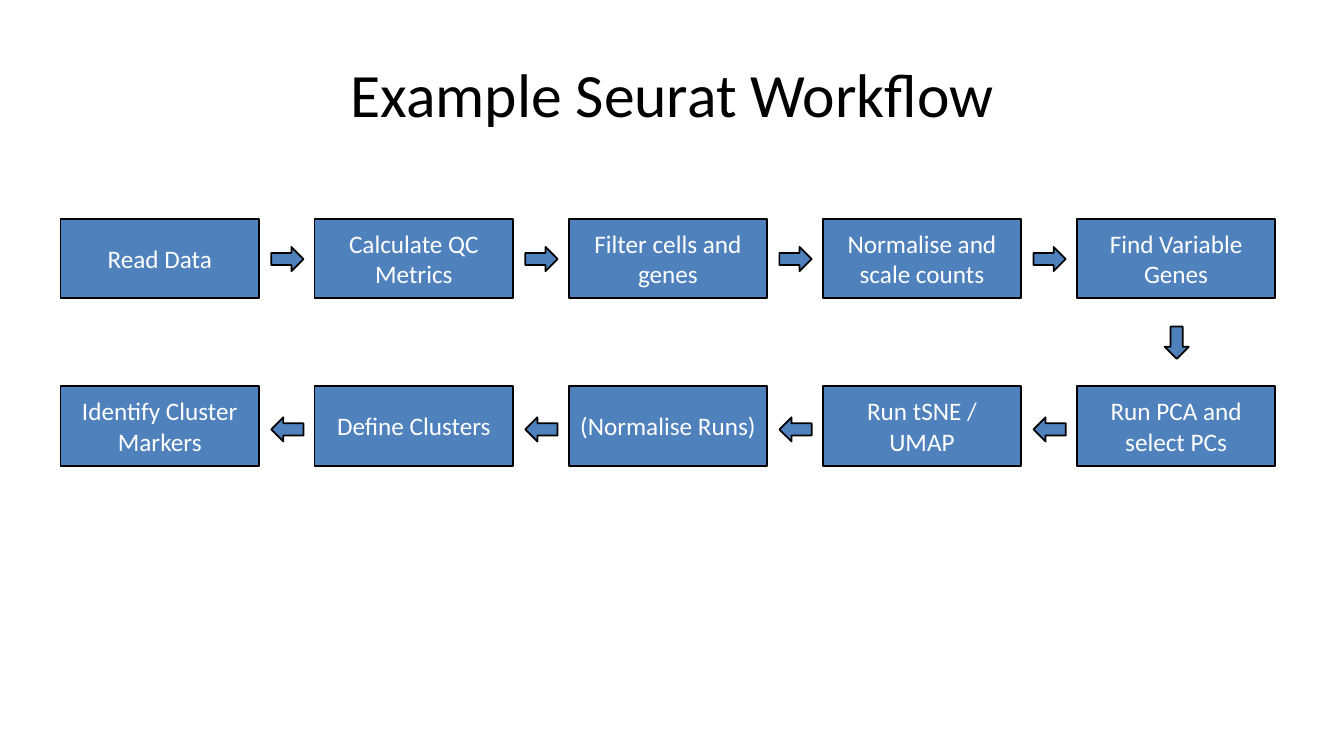
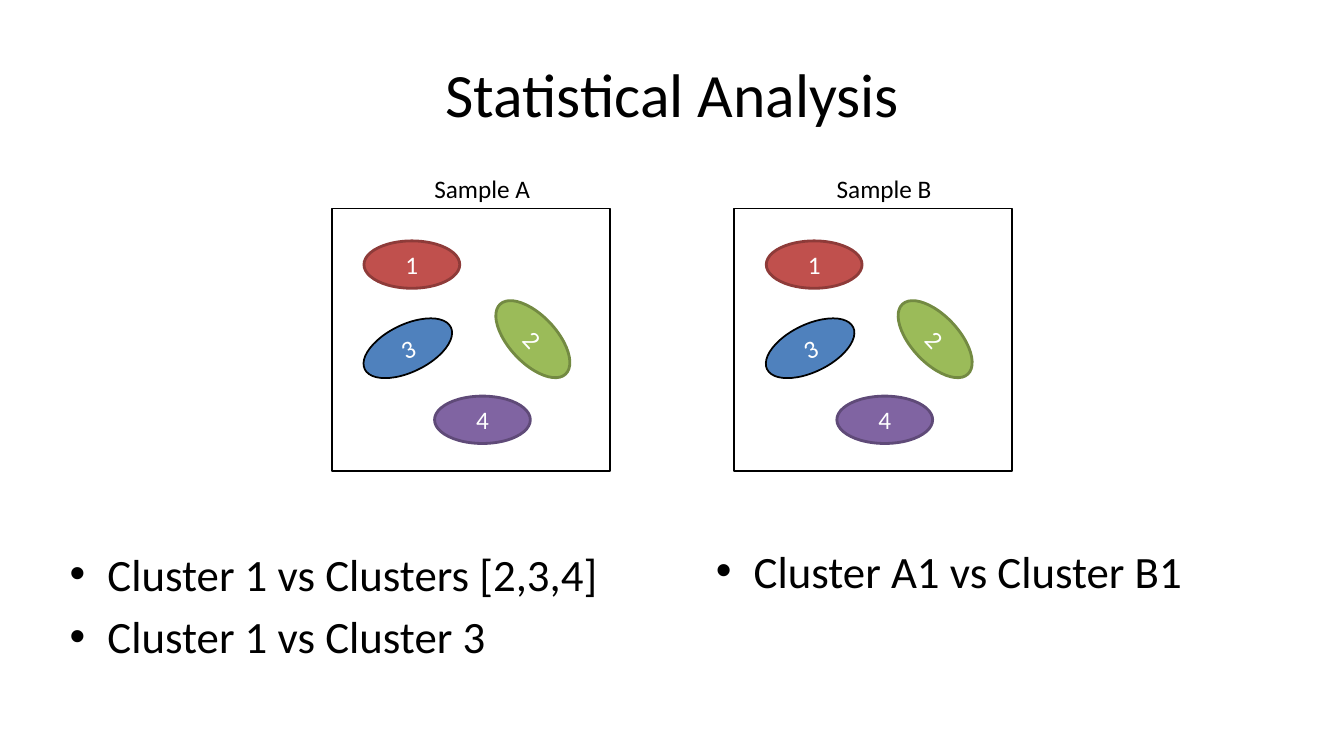
from dataclasses import dataclass
from typing import Any

from pptx import Presentation
from pptx.dml.color import RGBColor
from pptx.enum.shapes import MSO_SHAPE
from pptx.enum.text import MSO_ANCHOR, MSO_AUTO_SIZE, PP_ALIGN
from pptx.util import Emu, Pt

RECTANGLE, OVAL, ARROW = MSO_SHAPE.RECTANGLE, MSO_SHAPE.OVAL, MSO_SHAPE.RIGHT_ARROW
LEFT, CENTER = PP_ALIGN.LEFT, PP_ALIGN.CENTER
TOP, MIDDLE = MSO_ANCHOR.TOP, MSO_ANCHOR.MIDDLE
NO_FIT, GROW = MSO_AUTO_SIZE.NONE, MSO_AUTO_SIZE.SHAPE_TO_FIT_TEXT

EMU_PER_PX = 9144  # 100 px to the inch
PAGE_WIDTH, PAGE_HEIGHT = 1333, 750
TITLE_ONLY, TWO_CONTENT = 5, 3

BLACK = RGBColor(0x00, 0x00, 0x00)
WHITE = RGBColor(0xFF, 0xFF, 0xFF)
BLUE = RGBColor(0x4F, 0x81, 0xBD)
RED = RGBColor(0xC0, 0x50, 0x4D)
DARK_RED = RGBColor(0x8E, 0x3B, 0x39)
GREEN = RGBColor(0x9B, 0xBB, 0x59)
DARK_GREEN = RGBColor(0x73, 0x8A, 0x42)
PURPLE = RGBColor(0x80, 0x64, 0xA2)
DARK_PURPLE = RGBColor(0x5F, 0x4A, 0x78)

TITLE_FORMAT = {"size": Pt(44), "name": "Calibri"}
LIST_FORMAT = {"size": Pt(32), "name": "Calibri"}
LABEL_FORMAT = {"size": Pt(18), "name": "Calibri"}


@dataclass(frozen=True)
class Box:
    left: int
    top: int
    width: int
    height: int

    def emu(self) -> list[Emu]:
        return [px(n) for n in (self.left, self.top, self.width, self.height)]


@dataclass(frozen=True)
class Look:
    fill: RGBColor
    line: RGBColor = BLACK
    weight: float = 1.25


@dataclass(frozen=True)
class StepRow:
    top: int
    arrow_top: int
    arrow_angle: int
    steps: tuple[str, ...]


@dataclass(frozen=True)
class Cluster:
    """An ellipse placed relative to its sample panel."""
    name: str
    left: int
    top: int
    angle: float
    look: Look


BLUE_LOOK = Look(BLUE)
PANEL_LOOK = Look(WHITE)

TITLE_BOX = Box(67, 30, 1200, 125)
STEP_LEFT, STEP_WIDTH, STEP_HEIGHT, STEP_PITCH = 60, 197, 79, 252
ARROW_WIDTH, ARROW_HEIGHT, ARROW_GAP = 32, 24, 12
DOWN_ARROW_BOX = Box(1151, 328, ARROW_WIDTH, ARROW_HEIGHT)
STEP_ROWS = (
    StepRow(217, 245, 0, ("Read Data", "Calculate QC Metrics", "Filter cells and genes",
                          "Normalise and scale counts", "Find Variable Genes")),
    StepRow(383, 414, 180, ("Identify Cluster Markers", "Define Clusters",
                            "(Normalise Runs)", "Run tSNE / UMAP",
                            "Run PCA and select PCs")),
)

PANEL_TOP, PANEL_WIDTH, PANEL_HEIGHT = 207, 276, 260
CLUSTER_WIDTH, CLUSTER_HEIGHT = 95, 47
CLUSTERS = (
    Cluster("1", 32, 32, 0, Look(RED, DARK_RED, 2)),
    Cluster("2", 152, 106, 46.9, Look(GREEN, DARK_GREEN, 2)),
    Cluster("3", 28, 115, 334, BLUE_LOOK),
    Cluster("4", 102, 186, 0, Look(PURPLE, DARK_PURPLE, 2)),
)
SAMPLES = {"Sample A": 329, "Sample B": 728}
COMPARISONS = (
    (Box(59, 537, 553, 183), ("Cluster 1 vs Clusters [2,3,4]", "Cluster 1 vs Cluster 3")),
    (Box(700, 534, 553, 183), ("Cluster A1 vs Cluster B1",)),
)


def px(length: int) -> Emu:
    return Emu(length * EMU_PER_PX)


def set_text(frame: Any, lines: tuple[str, ...], text_format: dict[str, Any],
             color: RGBColor, align: PP_ALIGN, anchor: MSO_ANCHOR) -> None:
    frame.text = "\n".join(lines)
    frame.vertical_anchor = anchor
    for para in frame.paragraphs:
        para.alignment = align
        for span in para.runs:
            for attribute, value in text_format.items():
                setattr(span.font, attribute, value)
            span.font.color.rgb = color


def fill_placeholder(holder: Any, box: Box, lines: tuple[str, ...],
                     text_format: dict[str, Any], align: PP_ALIGN,
                     anchor: MSO_ANCHOR) -> None:
    holder.left, holder.top, holder.width, holder.height = box.emu()
    set_text(holder.text_frame, lines, text_format, BLACK, align, anchor)
    holder.text_frame.auto_size = NO_FIT


def add_page(deck: Any, layout: int, title: str) -> Any:
    page = deck.slides.add_slide(deck.slide_layouts[layout])
    fill_placeholder(page.shapes.title, TITLE_BOX, (title,), TITLE_FORMAT, CENTER, MIDDLE)
    return page


def add_figure(shapes: Any, kind: MSO_SHAPE, box: Box, look: Look,
               text: str = "", angle: float = 0) -> None:
    shape = shapes.add_shape(kind, *box.emu())
    shape.rotation = angle
    shape.shadow.inherit = False
    shape.fill.solid()
    shape.fill.fore_color.rgb = look.fill
    shape.line.color.rgb = look.line
    shape.line.width = Pt(look.weight)
    if text:
        set_text(shape.text_frame, (text,), LABEL_FORMAT, WHITE, CENTER, MIDDLE)


def add_step_row(page: Any, row: StepRow) -> None:
    for column, step in enumerate(row.steps):
        left = STEP_LEFT + column * STEP_PITCH
        add_figure(page.shapes, RECTANGLE,
                   Box(left, row.top, STEP_WIDTH, STEP_HEIGHT), BLUE_LOOK, step)
        if column < len(row.steps) - 1:
            arrow_box = Box(left + STEP_WIDTH + ARROW_GAP, row.arrow_top,
                            ARROW_WIDTH, ARROW_HEIGHT)
            add_figure(page.shapes, ARROW, arrow_box, BLUE_LOOK, angle=row.arrow_angle)


def add_sample(page: Any, name: str, left: int) -> None:
    shapes = page.shapes.add_group_shape().shapes
    add_figure(shapes, RECTANGLE, Box(left, PANEL_TOP, PANEL_WIDTH, PANEL_HEIGHT), PANEL_LOOK)
    for cluster in CLUSTERS:
        cluster_box = Box(left + cluster.left, PANEL_TOP + cluster.top,
                          CLUSTER_WIDTH, CLUSTER_HEIGHT)
        add_figure(shapes, OVAL, cluster_box, cluster.look, cluster.name, cluster.angle)
    label = shapes.add_textbox(*Box(left + 92, PANEL_TOP - 40, 116, 40).emu())
    set_text(label.text_frame, (name,), LABEL_FORMAT, BLACK, LEFT, TOP)
    label.text_frame.word_wrap = False
    label.text_frame.auto_size = GROW


def add_workflow_page(deck: Any) -> None:
    page = add_page(deck, TITLE_ONLY, "Example Seurat Workflow")
    for row in STEP_ROWS:
        add_step_row(page, row)
    add_figure(page.shapes, ARROW, DOWN_ARROW_BOX, BLUE_LOOK, angle=90)


def add_analysis_page(deck: Any) -> None:
    page = add_page(deck, TWO_CONTENT, "Statistical Analysis")
    for index, (box, lines) in enumerate(COMPARISONS, start=1):
        fill_placeholder(page.placeholders[index], box, lines, LIST_FORMAT, LEFT, TOP)
    for name, left in SAMPLES.items():
        add_sample(page, name, left)


def main() -> None:
    deck = Presentation()
    deck.slide_width, deck.slide_height = px(PAGE_WIDTH), px(PAGE_HEIGHT)
    add_workflow_page(deck)
    add_analysis_page(deck)
    deck.save("out.pptx")


if __name__ == "__main__":
    main()
